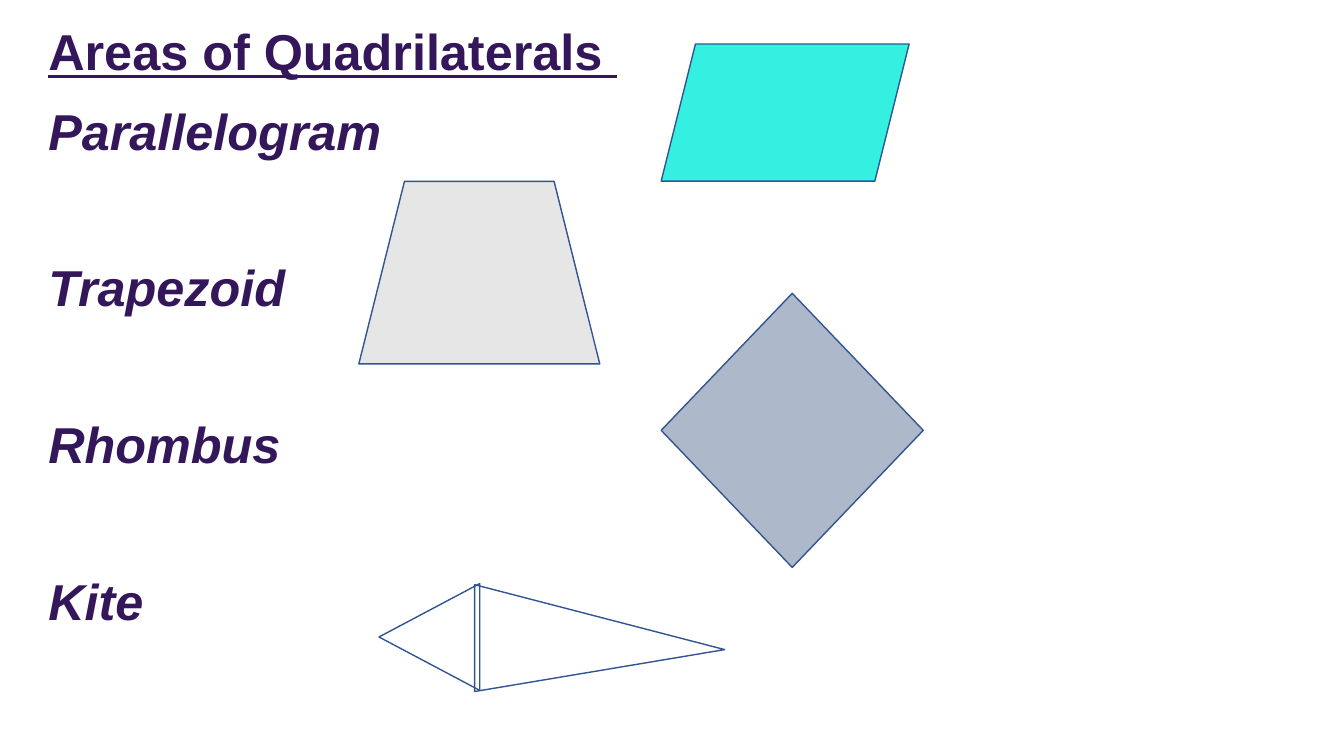
from dataclasses import dataclass

from pptx import Presentation
from pptx.dml.color import RGBColor
from pptx.enum.shapes import MSO_SHAPE
from pptx.enum.text import MSO_ANCHOR, PP_ALIGN
from pptx.util import Pt


@dataclass(frozen=True)
class Theme:
    font: str = "Arial"
    heading_size: int = 36
    heading: str = "33175A"
    outline: str = "325491"
    parallelogram: str = "33F0E1"
    trapezoid: str = "E7E6E6"
    rhombus: str = "ADB9CA"


THEME = Theme()
LINE_GAP = 13.6
SECTION_GAP = 68.7


def add_heading(frame, text, space_before, **style):
    paragraph = frame.paragraphs[0]
    if paragraph.runs:
        paragraph = frame.add_paragraph()
    paragraph.alignment = PP_ALIGN.LEFT
    paragraph.space_before = Pt(space_before)
    run = paragraph.add_run()
    run.text = text
    font = run.font
    font.name = THEME.font
    font.size = Pt(THEME.heading_size)
    font.bold = True
    font.italic = style.get("italic", False)
    font.underline = style.get("underline", False)
    font.color.rgb = RGBColor.from_string(THEME.heading)


def add_headings(slide):
    box = slide.shapes.add_textbox(Pt(27.4), Pt(7.2), Pt(720), Pt(98))
    frame = box.text_frame
    frame.word_wrap = True
    frame.vertical_anchor = MSO_ANCHOR.TOP
    frame.margin_top = Pt(7.3)
    add_heading(frame, "Areas of Quadrilaterals ", 0, underline=True)
    add_heading(frame, "Parallelogram", LINE_GAP, italic=True)
    for name in ("Trapezoid", "Rhombus", "Kite"):
        add_heading(frame, name, SECTION_GAP, italic=True)


def add_figure(slide, preset, left, top, width, height, fill=None, rotation=0):
    shape = slide.shapes.add_shape(preset, Pt(left), Pt(top), Pt(width), Pt(height))
    shape.shadow.inherit = False
    shape.rotation = rotation
    if fill:
        shape.fill.solid()
        shape.fill.fore_color.rgb = RGBColor.from_string(fill)
    else:
        shape.fill.background()
    shape.line.color.rgb = RGBColor.from_string(THEME.outline)
    shape.line.width = Pt(1)
    return shape


def add_kite(slide):
    triangle = MSO_SHAPE.ISOSCELES_TRIANGLE
    add_figure(slide, triangle, 268.6, 419, 76.3, 72, rotation=270)
    long_side = add_figure(slide, triangle, 390.2, 366.5, 76.3, 178.6, rotation=90)
    long_side.adjustments[0] = 0.608


def main():
    presentation = Presentation()
    presentation.slide_width = Pt(960)
    presentation.slide_height = Pt(540)
    slide = presentation.slides.add_slide(presentation.slide_layouts[6])
    add_headings(slide)
    add_figure(slide, MSO_SHAPE.PARALLELOGRAM, 472.3, 31.5, 177.1, 97.9, THEME.parallelogram)
    add_figure(slide, MSO_SHAPE.TRAPEZOID, 256.3, 129.6, 172.1, 130.3, THEME.trapezoid)
    add_figure(slide, MSO_SHAPE.DIAMOND, 472.3, 209.5, 187.2, 195.8, THEME.rhombus)
    add_kite(slide)
    presentation.save("out.pptx")


if __name__ == "__main__":
    main()
